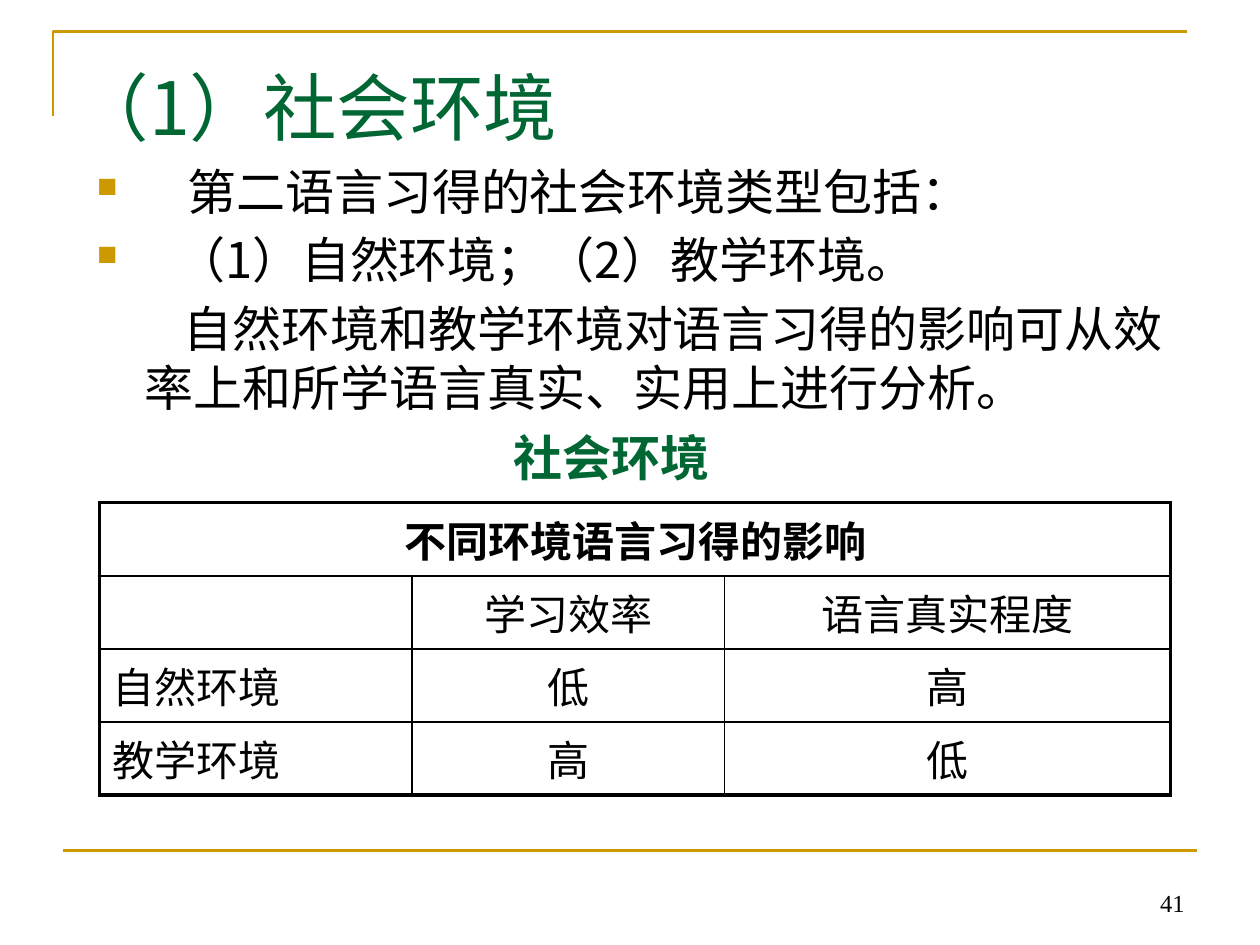
"""Build a slide on social environments in second language acquisition."""
from lxml import etree
from pptx import Presentation
from pptx import util as u
from pptx.dml.color import RGBColor
from pptx.enum import shapes, text
from pptx.oxml import ns

COLORS = {"gold": "CC9900", "green": "006633", "black": "000000"}
CJK = "Noto Sans CJK SC"


def add_run(p, content, size, color="black", bold=False, font=CJK):
    r = p.add_run()
    r.text = content
    r.font.size = u.Pt(size)
    r.font.bold = bold
    r.font.name = font
    r.font.color.rgb = RGBColor.from_string(COLORS[color])
    ea = etree.SubElement(r.font._element, ns.qn("a:ea"))
    ea.set("typeface", CJK)


def add_text_box(s, left, top, width, height, anchor):
    tf = s.shapes.add_textbox(*map(u.Inches, (left, top, width, height))).text_frame
    tf.word_wrap = True
    tf.vertical_anchor = anchor
    return tf


prs = Presentation()
prs.slide_width, prs.slide_height = u.Inches(10), u.Inches(7.5)
s = prs.slides.add_slide(prs.slide_layouts[5])

builder = s.shapes.build_freeform(u.Inches(0.42), u.Inches(0.92))
builder.add_line_segments(
    [(u.Inches(0.42), u.Inches(0.25)), (u.Inches(9.42), u.Inches(0.25))], close=False)
corner = builder.convert_to_shape()
corner.shadow.inherit = False
corner.fill.background()
rule = s.shapes.add_connector(
    shapes.MSO_CONNECTOR.STRAIGHT, *map(u.Inches, (0.5, 6.75, 9.5, 6.75)))
etree.SubElement(rule._element.spPr, ns.qn("a:effectLst"))
for sp in (corner, rule):
    sp.line.color.rgb = RGBColor.from_string(COLORS["gold"])
    sp.line.width = u.Pt(1.5)

title = s.shapes.title
title.left, title.top, title.width, title.height = map(u.Inches, (0.5, 0.31, 9, 0.93))
tf = title.text_frame
tf.vertical_anchor = text.MSO_ANCHOR.BOTTOM
tf.paragraphs[0].alignment = text.PP_ALIGN.LEFT
add_run(tf.paragraphs[0], "（1）社会环境", 42, "green")

body = [
    ("第二语言习得的社会环境类型包括：", 0.72, -0.72, True),
    ("（1）自然环境；（2）教学环境。", 0.63, -0.63, True),
    ("自然环境和教学环境对语言习得的影响可从效率上和所学语言真实、实用上进行分析。",
     0.38, 0.31, False),
]
tf = add_text_box(s, 0.67, 1.23, 8.66, 2.36, text.MSO_ANCHOR.TOP)
tf.margin_right = u.Inches(0.05)
for i, (content, margin, indent, bulleted) in enumerate(body):
    p = tf.paragraphs[0] if i == 0 else tf.add_paragraph()
    p.space_before = u.Pt(5.6)
    pPr = p._p.get_or_add_pPr()
    pPr.set("marL", str(u.Inches(margin)))
    pPr.set("indent", str(u.Inches(indent)))
    if bulleted:
        color = etree.SubElement(pPr, ns.qn("a:buClr"))
        etree.SubElement(color, ns.qn("a:srgbClr"), val=COLORS["gold"])
        etree.SubElement(pPr, ns.qn("a:buSzPct"), val="57000")
        etree.SubElement(pPr, ns.qn("a:buChar"), char="■")
    add_run(p, content, 28)

tf = add_text_box(s, 7.17, 6.83, 2.33, 0.5, text.MSO_ANCHOR.BOTTOM)
tf.paragraphs[0].alignment = text.PP_ALIGN.RIGHT
add_run(tf.paragraphs[0], "41", 14, font="Times New Roman")

rows = [
    ("不同环境语言习得的影响", "", ""),
    ("", "学习效率", "语言真实程度"),
    ("自然环境", "低", "高"),
    ("教学环境", "高", "低"),
]
widths = (2.48, 2.48, 3.54)
table = s.shapes.add_table(
    len(rows), len(widths), *map(u.Inches, (0.79, 3.99, sum(widths), 2.32))).table
for column, width in zip(table.columns, widths):
    column.width = u.Inches(width)
table.cell(0, 0).merge(table.cell(0, 2))
for i, row in enumerate(rows):
    for j, content in enumerate(row):
        cell = table.cell(i, j)
        tcPr = cell._tc.get_or_add_tcPr()
        outer = {"L": j == 0, "R": j == 2 or i == 0, "T": i == 0, "B": i == 3}
        for side, thick in outer.items():
            ln = etree.SubElement(
                tcPr, ns.qn(f"a:ln{side}"), w=str(u.Pt(2.25 if thick else 1)))
            fill = etree.SubElement(ln, ns.qn("a:solidFill"))
            etree.SubElement(fill, ns.qn("a:srgbClr"), val=COLORS["black"])
        cell.fill.background()
        p = cell.text_frame.paragraphs[0]
        p.alignment = text.PP_ALIGN.LEFT if i > 0 and j == 0 else text.PP_ALIGN.CENTER
        if content:
            add_run(p, content, 24, bold=i == 0, font="Lato")

tf = add_text_box(s, 3.98, 3.28, 1.87, 0.63, text.MSO_ANCHOR.BOTTOM)
add_run(tf.paragraphs[0], "社会环境", 28, "green", True)

prs.save("out.pptx")
